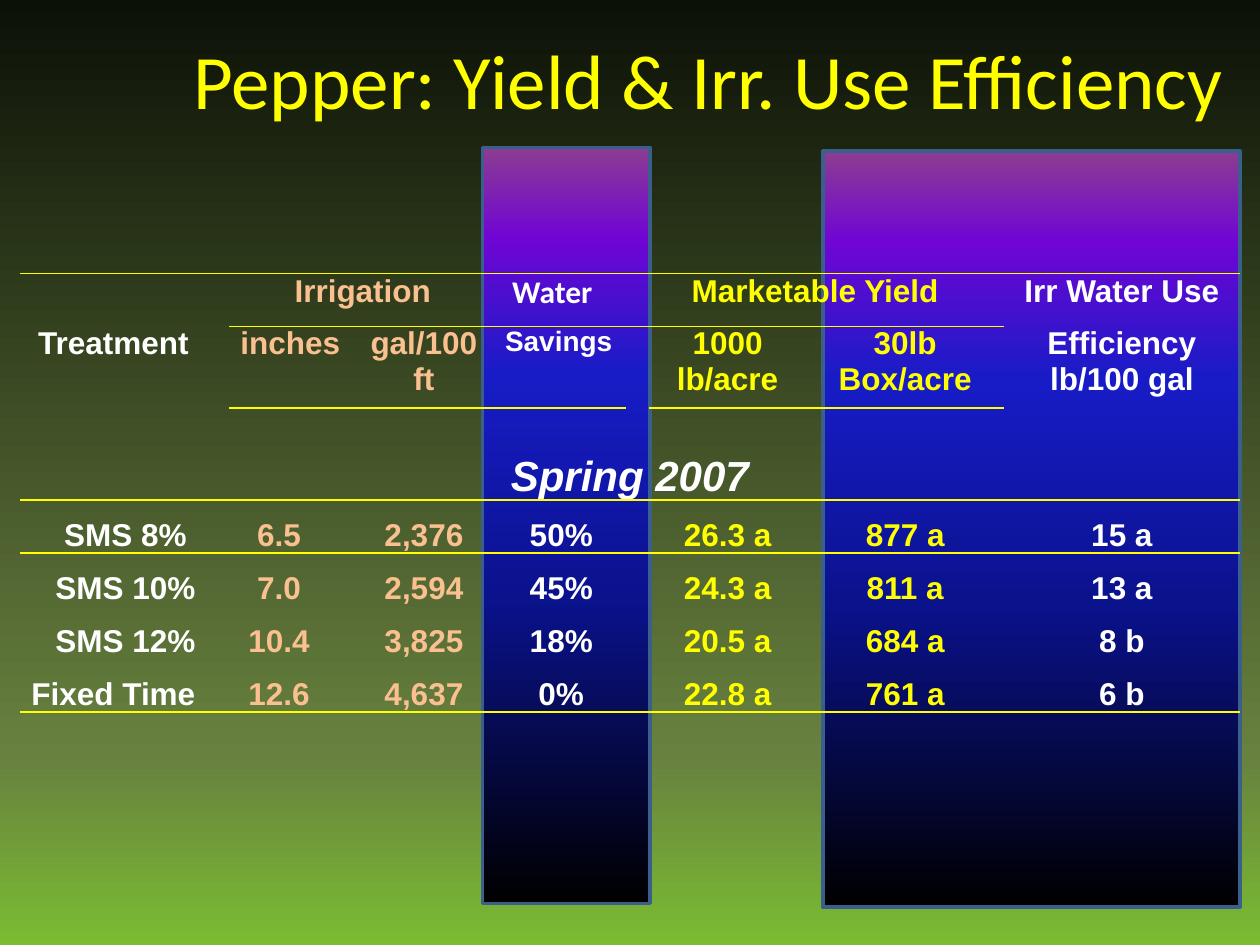
from lxml import etree
from pptx import Presentation
from pptx.dml.color import RGBColor
from pptx.enum.shapes import MSO_SHAPE
from pptx.enum.text import MSO_ANCHOR, PP_ALIGN
from pptx.oxml.ns import qn
from pptx.util import Inches, Pt

RECTANGLE = MSO_SHAPE.RECTANGLE
MIDDLE, BOTTOM = MSO_ANCHOR.MIDDLE, MSO_ANCHOR.BOTTOM
LEFT, CENTER = PP_ALIGN.LEFT, PP_ALIGN.CENTER
NO_GRID_STYLE = "{2D5ABB26-0587-4C30-8999-92F81FD0307C}"

COLORS = {"yellow": "FFFF00", "white": "FFFFFF", "peach": "FAC090", "outline": "3A5F8C"}
BACKGROUND_STOPS = [(0, "0C1107"), (80, "68813F"), (100, "7ABC32")]
BAND_STOPS = [(0, "000000"), (40, "0A128C"), (70, "181CC7"), (88, "7005D4"), (100, "8C3D91")]

# Highlight bands behind the table: left, top, width, height
BANDS = [(6.53, 1.2, 3.31, 6), (3.83, 1.17, 1.33, 6)]

COLUMN_WIDTHS = [1.48, 0.18, 0.97, 1.15, 1.03, 0.18, 1.25, 1.39, 0.18, 1.87]
ROW_HEIGHTS = [0.42, 0.65, 0.73] + [0.42] * 4

# Header cells: row, column, columns spanned, text, colour, differing formats
HEADERS = [
    (0, 2, 2, "Irrigation", "peach", {}),
    (0, 4, 2, " Water", "white", {"name": "Calibri", "align": LEFT}),
    (0, 6, 2, "Marketable Yield", "yellow", {}),
    (0, 9, 1, "Irr Water Use", "white", {}),
    (1, 0, 1, "Treatment", "white", {}),
    (1, 2, 1, "inches", "peach", {}),
    (1, 3, 1, "gal/100 ft", "peach", {}),
    (1, 4, 1, "Savings", "white", {"size": 16, "align": LEFT}),
    (1, 6, 1, "1000 lb/acre", "yellow", {}),
    (1, 7, 2, "30lb Box/acre", "yellow", {}),
    (1, 9, 1, "Efficiency\nlb/100 gal", "white", {}),
    (2, 0, 10, "Spring 2007", "white", {"size": 24, "italic": True}),
]

# Layout of every data row: column, columns spanned, colour
DATA_COLUMNS = [(0, 1, "white"), (1, 2, "peach"), (3, 1, "peach"), (4, 1, "white"),
                (6, 1, "yellow"), (7, 2, "yellow"), (9, 1, "white")]
TREATMENTS = [
    ("SMS 8%", "6.5", "2,376", "50%", "26.3 a", "877 a", "15 a"),
    ("SMS 10%", "7.0", "2,594", "45%", "24.3 a", "811 a", "13 a"),
    ("SMS 12%", "10.4", "3,825", "18%", "20.5 a", "684 a", "8 b"),
    ("Fixed Time", "12.6", "4,637", "0%", "22.8 a", "761 a", "6 b"),
]
FIRST_DATA_ROW = 3

# Horizontal rules: row, side of its cells, columns
RULES = [(0, "lnT", range(10)), (1, "lnT", (2, 3, 4, 6, 7, 8)),
         (2, "lnB", range(10)), (3, "lnT", range(10)), (6, "lnB", range(10))]


def set_gradient(fill, element, stops, angle):
    fill.gradient()
    fill.gradient_angle = angle
    stop_list = next(element.iter(qn("a:gsLst")))
    for old_stop in list(stop_list):
        stop_list.remove(old_stop)
    for position, color in stops:
        stop = etree.SubElement(stop_list, qn("a:gs"), pos=str(position * 1000))
        etree.SubElement(stop, qn("a:srgbClr"), val=color)


def format_font(font, color, **formats):
    for attribute, value in formats.items():
        setattr(font, attribute, Pt(value) if attribute == "size" else value)
    font.color.rgb = RGBColor.from_string(COLORS[color])


def add_band(slide, bounds):
    band = slide.shapes.add_shape(RECTANGLE, *map(Inches, bounds))
    band.shadow.inherit = False
    set_gradient(band.fill, band._element, BAND_STOPS, 90)
    band.line.color.rgb = RGBColor.from_string(COLORS["outline"])
    band.line.width = Pt(2)


def add_title(slide, text):
    title = slide.shapes.add_textbox(Inches(1.25), Inches(0), Inches(8.75), Inches(1.25))
    frame = title.text_frame
    frame.word_wrap = True
    frame.vertical_anchor = MIDDLE
    paragraph = frame.paragraphs[0]
    paragraph.alignment = CENTER
    run = paragraph.add_run()
    run.text = text
    format_font(run.font, "yellow", size=44, name="Calibri")


def fill_cell(table, row, column, span, text, color, align=CENTER, spacing=None, **formats):
    cell = table.cell(row, column)
    if span > 1:
        cell.merge(table.cell(row, column + span - 1))
    cell.text = text
    font_formats = {"size": 18, "name": "Arial", "bold": True} | formats
    for paragraph in cell.text_frame.paragraphs:
        paragraph.alignment = align
        if spacing:
            paragraph.line_spacing = spacing
        for run in paragraph.runs:
            format_font(run.font, color, **font_formats)
    return cell


def add_rule(table, row, side, columns):
    for column in columns:
        properties = table.cell(row, column)._tc.get_or_add_tcPr()
        line = etree.Element(qn(f"a:{side}"), w=str(Pt(1)))
        solid = etree.SubElement(line, qn("a:solidFill"))
        etree.SubElement(solid, qn("a:srgbClr"), val=COLORS["yellow"])
        properties.insert(0, line)


def add_yield_table(slide):
    table = slide.shapes.add_table(
        len(ROW_HEIGHTS), len(COLUMN_WIDTHS), Inches(0.16), Inches(2.17),
        Inches(sum(COLUMN_WIDTHS)), Inches(sum(ROW_HEIGHTS))).table
    table.first_row = table.horz_banding = False
    table._tbl.tblPr.find(qn("a:tableStyleId")).text = NO_GRID_STYLE
    for column, width in zip(table.columns, COLUMN_WIDTHS):
        column.width = Inches(width)
    for row, height in zip(table.rows, ROW_HEIGHTS):
        row.height = Inches(height)
    for cell in table.iter_cells():
        cell.fill.background()
        cell.margin_left = cell.margin_right = Inches(0.07)
        cell.margin_top = cell.margin_bottom = 0

    # Headers and season line
    for row, column, span, text, color, formats in HEADERS:
        fill_cell(table, row, column, span, text, color, **formats)
    table.cell(2, 0).vertical_anchor = BOTTOM

    # Treatments, with the SMS names indented
    for row, values in enumerate(TREATMENTS, FIRST_DATA_ROW):
        for (column, span, color), value in zip(DATA_COLUMNS, values):
            cell = fill_cell(table, row, column, span, value, color, spacing=1.5)
            if value.startswith("SMS"):
                properties = cell.text_frame.paragraphs[0]._p.get_or_add_pPr()
                properties.set("marL", "0")
                properties.set("indent", str(Inches(0.19)))

    for rule in RULES:
        add_rule(table, *rule)


def main():
    presentation = Presentation()
    presentation.slide_width = Inches(10)
    presentation.slide_height = Inches(7.5)
    slide = presentation.slides.add_slide(presentation.slide_layouts[6])
    set_gradient(slide.background.fill, slide._element, BACKGROUND_STOPS, 270)

    for bounds in BANDS:
        add_band(slide, bounds)
    add_yield_table(slide)
    add_title(slide, "Pepper: Yield & Irr. Use Efficiency")

    presentation.save("out.pptx")


if __name__ == "__main__":
    main()
